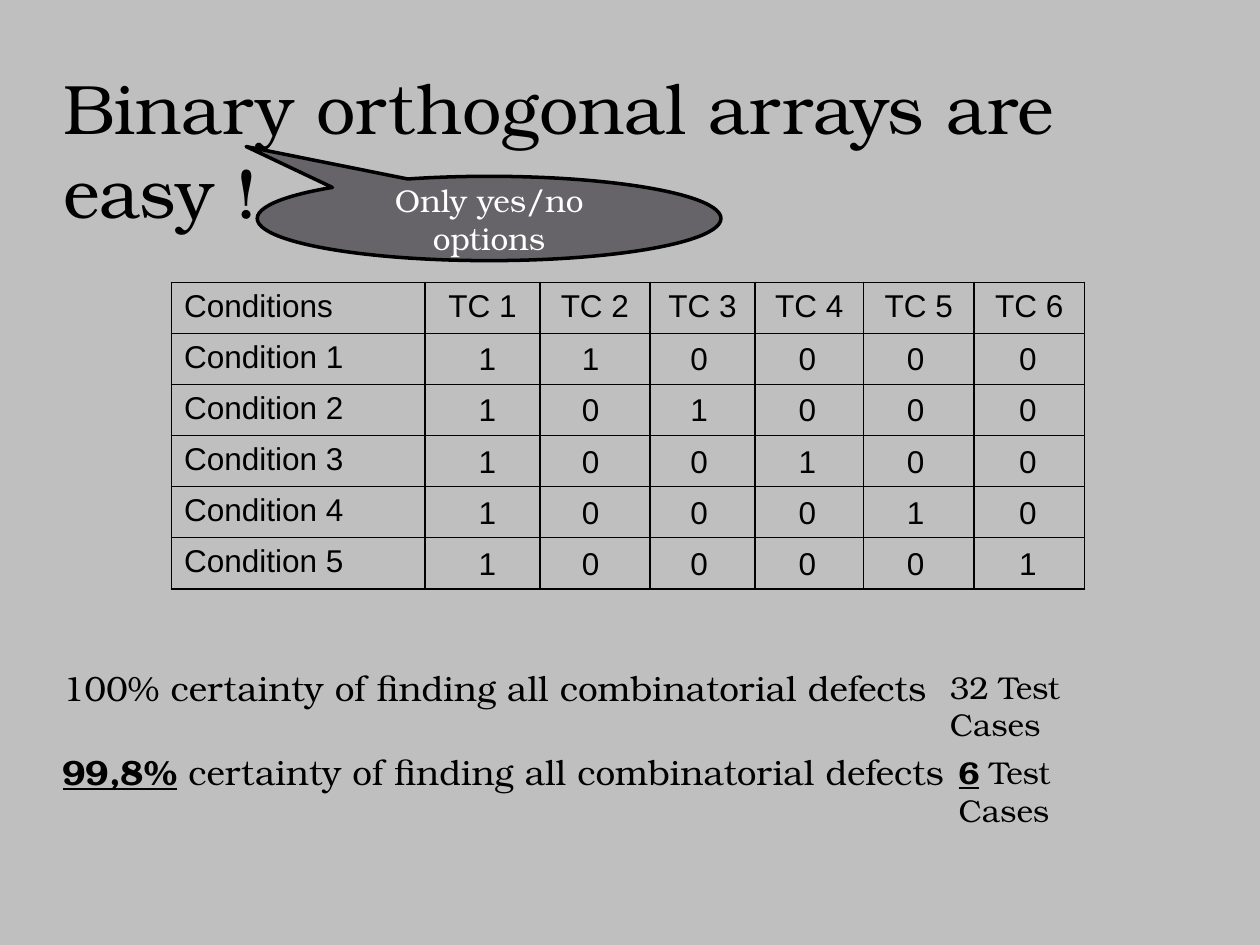
import dataclasses

import pptx
import pptx.dml.color
import pptx.enum.shapes
import pptx.enum.text
import pptx.oxml
import pptx.oxml.ns
import pptx.util

Pt = pptx.util.Pt
RGB = pptx.dml.color.RGBColor.from_string
ALIGN = pptx.enum.text.PP_ALIGN
ANCHOR = pptx.enum.text.MSO_ANCHOR


@dataclasses.dataclass(frozen=True)
class Theme:
    """Colours, fonts and type sizes of the slide."""
    background: str = "BFBFBF"
    ink: str = "000000"
    callout: str = "666468"
    callout_text: str = "FFFFFF"
    serif: str = "TeX Gyre Bonum"
    sans: str = "Arial"
    title: int = 40
    summary: int = 20
    body: int = 18


THEME = Theme()
COLUMN_WIDTHS = [145, 65.5, 63, 60, 62, 63.25, 63]
ROW_HEIGHT = 29.2
BIT_LEFTS = [266.4, 325.4, 387.4, 449.3, 511.2, 575.3]
BIT_TOP, BIT_STEP = 190.1, 29.35
CONDITIONS = 5


def format_paragraph(p, font, size, color=THEME.ink, align=ALIGN.LEFT):
    """Set the font and alignment of a whole paragraph."""
    p.alignment = align
    p.font.name = font
    p.font.size = Pt(size)
    p.font.color.rgb = RGB(color)


def add_runs(p, runs):
    """Fill a paragraph with (text, emphasised) runs."""
    for text, emphasised in runs:
        r = p.add_run()
        r.text = text
        if emphasised:
            r.font.bold = r.font.underline = True


def add_text(s, box, paragraphs, font, size, gap=0):
    """Add a wrapping text box with one entry of runs per paragraph."""
    tf = s.shapes.add_textbox(*map(Pt, box)).text_frame
    tf.word_wrap = True
    for i, runs in enumerate(paragraphs):
        p = tf.add_paragraph() if i else tf.paragraphs[0]
        add_runs(p, runs)
        format_paragraph(p, font, size)
        if i:
            p.space_before = Pt(gap)


def set_title(s, text, box):
    """Place and format the title placeholder."""
    sp = s.shapes.title
    sp.left, sp.top, sp.width, sp.height = map(Pt, box)
    tf = sp.text_frame
    tf.text = text
    tf.word_wrap = True
    tf.auto_size = pptx.enum.text.MSO_AUTO_SIZE.NONE
    tf.vertical_anchor = ANCHOR.TOP
    format_paragraph(tf.paragraphs[0], THEME.serif, THEME.title)


def style_cell(cell):
    """Give a cell thin borders on all sides and no fill."""
    tcPr = cell._tc.get_or_add_tcPr()
    for side in "LRTB":
        tcPr.append(pptx.oxml.parse_xml(
            f'<a:ln{side} {pptx.oxml.ns.nsdecls("a")} w="{Pt(1)}"><a:solidFill>'
            f'<a:srgbClr val="{THEME.ink}"/></a:solidFill></a:ln{side}>'))
    cell.fill.background()


def add_grid(s, left, top):
    """Add the table of conditions against test cases."""
    rows, cols = CONDITIONS + 1, len(COLUMN_WIDTHS)
    table = s.shapes.add_table(rows, cols, Pt(left), Pt(top), Pt(sum(COLUMN_WIDTHS)),
                               Pt(rows * ROW_HEIGHT)).table
    table.first_row = table.horz_banding = False
    for column, width in zip(table.columns, COLUMN_WIDTHS):
        column.width = Pt(width)
    for i, row in enumerate(table.rows):
        row.height = Pt(ROW_HEIGHT)
        for j, cell in enumerate(row.cells):
            style_cell(cell)
            if j == 0:
                cell.text = f"Condition {i}" if i else "Conditions"
            elif i == 0:
                cell.text = f"TC {j}"
            format_paragraph(cell.text_frame.paragraphs[0], THEME.sans, THEME.body,
                             align=ALIGN.CENTER if j else ALIGN.LEFT)


def add_bits(s):
    """Add the array: ones in the first column and along the diagonal."""
    for i in range(CONDITIONS):
        for j, left in enumerate(BIT_LEFTS):
            bit = "1" if j in (0, i + 1) else "0"
            add_text(s, (left, BIT_TOP + i * BIT_STEP, 24.5, 28.8), [[(bit, False)]],
                     THEME.sans, THEME.body)


def add_callout(s, text, box, tip):
    """Add an outlined ellipse callout whose pointer ends at tip."""
    sp = s.shapes.add_shape(pptx.enum.shapes.MSO_SHAPE.OVAL_CALLOUT, *map(Pt, box))
    sp.adjustments[0], sp.adjustments[1] = tip
    sp.shadow.inherit = False
    sp.fill.solid()
    sp.fill.fore_color.rgb = RGB(THEME.callout)
    sp.line.color.rgb = RGB(THEME.ink)
    sp.line.width = Pt(2)
    tf = sp.text_frame
    tf.text = text
    tf.word_wrap = True
    tf.vertical_anchor = ANCHOR.MIDDLE
    format_paragraph(tf.paragraphs[0], THEME.serif, THEME.body, THEME.callout_text,
                     ALIGN.CENTER)


def main():
    """Build the slide and save it."""
    prs = pptx.Presentation()
    prs.slide_width, prs.slide_height = Pt(720), Pt(540)
    s = prs.slides.add_slide(prs.slide_layouts.get_by_name("Title Only"))
    s.background.fill.solid()
    s.background.fill.fore_color.rgb = RGB(THEME.background)

    set_title(s, "Binary orthogonal arrays are easy !", (28.8, 33, 659.5, 55.5))
    add_grid(s, 98, 161.3)
    add_bits(s)
    claim = "certainty of finding all combinatorial defects"
    add_text(s, (28.8, 377.3, 523.5, 80),
             [[(f"100% {claim}", False)], [("99,8%", True), (f" {claim}", False)]],
             THEME.serif, THEME.summary, gap=24)
    add_callout(s, "Only yes/no options", (147, 100.8, 265, 48.2), (-0.524, -0.854))
    add_text(s, (535.7, 378, 126.7, 28.8), [[("32 Test Cases", False)]],
             THEME.serif, THEME.body)
    add_text(s, (540.7, 427, 117.4, 28.8), [[("6", True), (" Test Cases", False)]],
             THEME.serif, THEME.body)
    prs.save("out.pptx")


if __name__ == "__main__":
    main()
